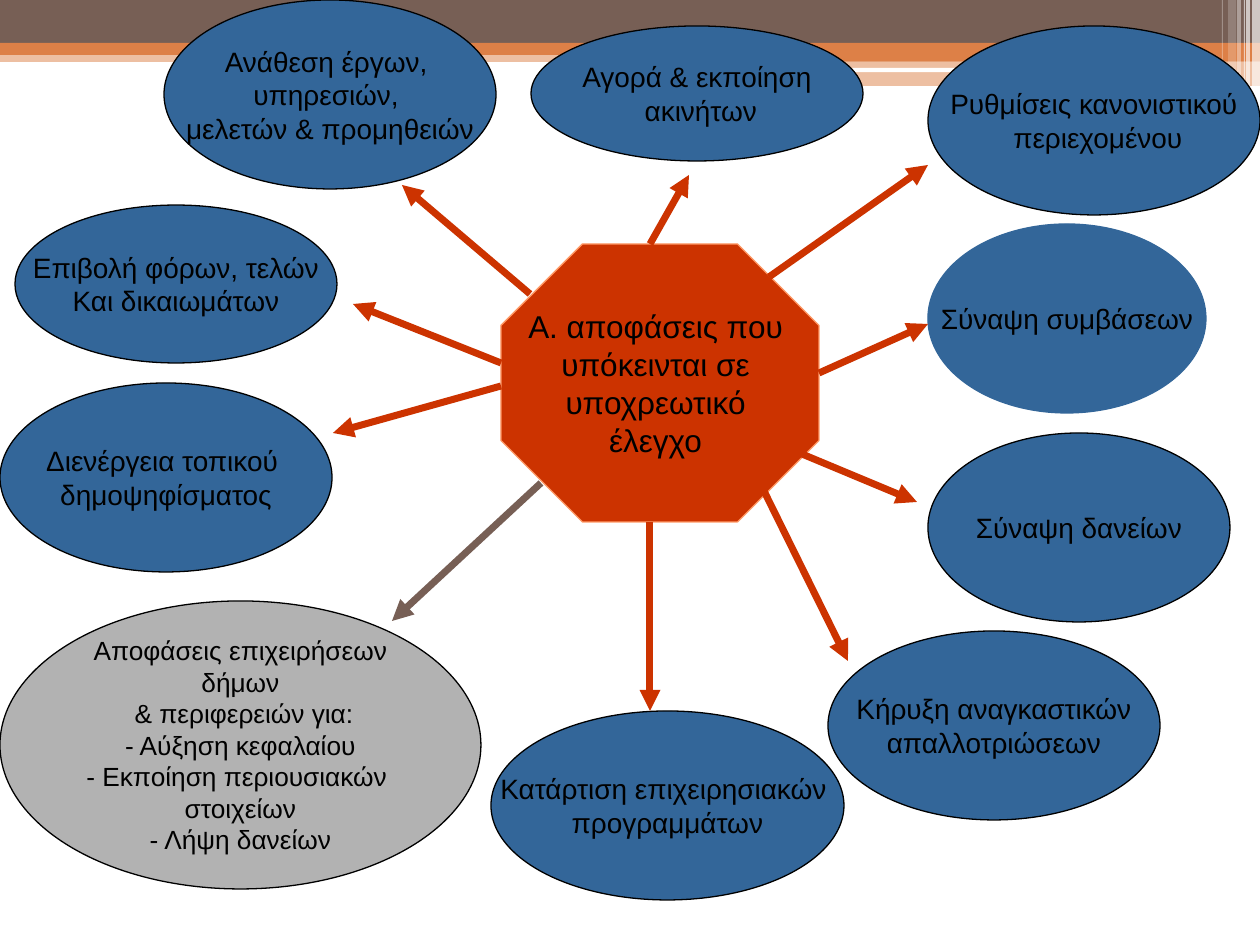
from dataclasses import dataclass

from lxml import etree
from pptx import Presentation
from pptx.dml.color import RGBColor
from pptx.enum.shapes import MSO_CONNECTOR, MSO_SHAPE
from pptx.enum.text import MSO_ANCHOR, PP_ALIGN
from pptx.oxml.ns import qn
from pptx.util import Emu, Pt

RECTANGLE = MSO_SHAPE.RECTANGLE
ROUNDED = MSO_SHAPE.ROUNDED_RECTANGLE
ELLIPSE = MSO_SHAPE.OVAL
OCTAGON = MSO_SHAPE.OCTAGON
STRAIGHT = MSO_CONNECTOR.STRAIGHT
MIDDLE = MSO_ANCHOR.MIDDLE
CENTER = PP_ALIGN.CENTER

EMU_PER_PX = 914400 / 126
FONT = "Arial"
COLORS = {
    "brown": "775F55",
    "orange": "DD8047",
    "white": "FFFFFF",
    "black": "000000",
    "red": "CC3300",
    "peach": "FF9966",
    "blue": "336699",
    "gray": "B2B2B2",
}


@dataclass
class Band:
    left: int
    top: int
    width: int
    height: int
    color: str
    opacity: int = 100
    kind: int = RECTANGLE


@dataclass
class Bubble:
    left: int
    top: int
    width: int
    height: int
    lines: list[str]
    fill: str = "blue"
    outline: str = "black"
    size: int = 16
    kind: int = ELLIPSE


@dataclass
class Arrow:
    start: tuple[int, int]
    end: tuple[int, int]
    color: str = "red"


# Header bands, then the thin vertical stripes at the right edge
BANDS = [
    Band(0, 50, 1260, 12, "orange", 50),
    Band(0, 0, 1260, 43, "brown"),
    Band(0, 43, 1260, 12, "orange"),
    Band(746, 49, 514, 12, "orange"),
    Band(746, 61, 514, 25, "orange", 50),
    Band(745, 68, 422, 4, "white", kind=ROUNDED),
    Band(1016, 81, 220, 5, "white", kind=ROUNDED),
    Band(1252, 0, 8, 86, "white", 65),
    Band(1246, 0, 4, 86, "white", 65),
    Band(1244, 0, 1, 86, "white", 60),
    Band(1237, 0, 4, 86, "white", 40),
    Band(1228, 0, 8, 81, "white", 20),
    Band(1222, 0, 1, 81, "white", 30),
]

CENTRAL_TOPIC = Bubble(
    501, 244, 318, 278,
    ["Α. αποφάσεις που ", "υπόκεινται σε ", "υποχρεωτικό ", "έλεγχο "],
    "red", "peach", 18, OCTAGON,
)

DECISIONS = [
    Bubble(928, 26, 332, 189, ["Ρυθμίσεις κανονιστικού", " περιεχομένου"]),
    Bubble(164, 0, 332, 189,
           ["Ανάθεση έργων, ", "υπηρεσιών, ", "μελετών & προμηθειών"]),
    Bubble(531, 26, 332, 135, ["Αγορά & εκποίηση", " ακινήτων"]),
    Bubble(828, 631, 332, 189, ["Κήρυξη αναγκαστικών", "απαλλοτριώσεων"]),
    Bubble(15, 205, 322, 158, ["Επιβολή φόρων, τελών", "Και δικαιωμάτων"]),
    Bubble(928, 224, 278, 189, ["Σύναψη συμβάσεων"], outline="blue"),
    Bubble(928, 433, 302, 189, ["Σύναψη δανείων"]),
    Bubble(0, 383, 332, 189, ["Διενέργεια τοπικού ", "δημοψηφίσματος"]),
    Bubble(491, 711, 353, 189, ["Κατάρτιση επιχειρησιακών ", "προγραμμάτων"]),
    Bubble(0, 601, 481, 288,
           ["Αποφάσεις επιχειρήσεων", "δήμων", " & περιφερειών για:",
            "- Αύξηση κεφαλαίου", "- Εκποίηση περιουσιακών ", "στοιχείων",
            "- Λήψη δανείων"], "gray", size=15),
]

ARROWS = [
    Arrow((530, 294), (402, 185)),
    Arrow((501, 363), (353, 304)),
    Arrow((501, 386), (333, 433)),
    Arrow((650, 522), (650, 711)),
    Arrow((764, 491), (848, 661)),
    Arrow((802, 454), (917, 502)),
    Arrow((769, 277), (928, 165)),
    Arrow((819, 373), (928, 324)),
    Arrow((650, 244), (689, 175)),
    Arrow((541, 483), (392, 621), "brown"),
]


def px(value: int) -> Emu:
    return Emu(round(value * EMU_PER_PX))


def rgb(name: str) -> RGBColor:
    return RGBColor.from_string(COLORS[name])


def add_filled_shape(slide, item: Band | Bubble, color: str):
    shape = slide.shapes.add_shape(
        item.kind, px(item.left), px(item.top), px(item.width), px(item.height))
    shape.shadow.inherit = False
    shape.fill.solid()
    shape.fill.fore_color.rgb = rgb(color)
    return shape


def add_band(slide, band: Band) -> None:
    shape = add_filled_shape(slide, band, band.color)
    shape.line.fill.background()
    if band.opacity < 100:
        color = shape.fill._xPr.find(qn("a:solidFill"))[0]
        etree.SubElement(color, qn("a:alpha"), val=str(band.opacity * 1000))


def add_bubble(slide, bubble: Bubble) -> None:
    shape = add_filled_shape(slide, bubble, bubble.fill)
    shape.line.color.rgb = rgb(bubble.outline)
    shape.line.width = Pt(0.75)
    text_frame = shape.text_frame
    text_frame.word_wrap = False
    text_frame.vertical_anchor = MIDDLE
    text_frame.text = "\n".join(bubble.lines)
    for paragraph in text_frame.paragraphs:
        paragraph.alignment = CENTER
        for run in paragraph.runs:
            run.font.name = FONT
            run.font.size = Pt(bubble.size)
            run.font.color.rgb = rgb("black")


def add_arrow(slide, arrow: Arrow) -> None:
    points = [px(value) for value in (*arrow.start, *arrow.end)]
    connector = slide.shapes.add_connector(STRAIGHT, *points)
    connector.line.color.rgb = rgb(arrow.color)
    connector.line.width = Pt(4)
    properties = connector._element.spPr
    etree.SubElement(properties.find(qn("a:ln")), qn("a:tailEnd"), type="triangle")
    etree.SubElement(properties, qn("a:effectLst"))


def main() -> None:
    presentation = Presentation()
    presentation.slide_width = px(1260)
    presentation.slide_height = px(945)
    slide = presentation.slides.add_slide(presentation.slide_layouts[6])

    for band in BANDS:
        add_band(slide, band)
    for bubble in [CENTRAL_TOPIC, *DECISIONS]:
        add_bubble(slide, bubble)
    for arrow in ARROWS:
        add_arrow(slide, arrow)

    presentation.save("out.pptx")


if __name__ == "__main__":
    main()
